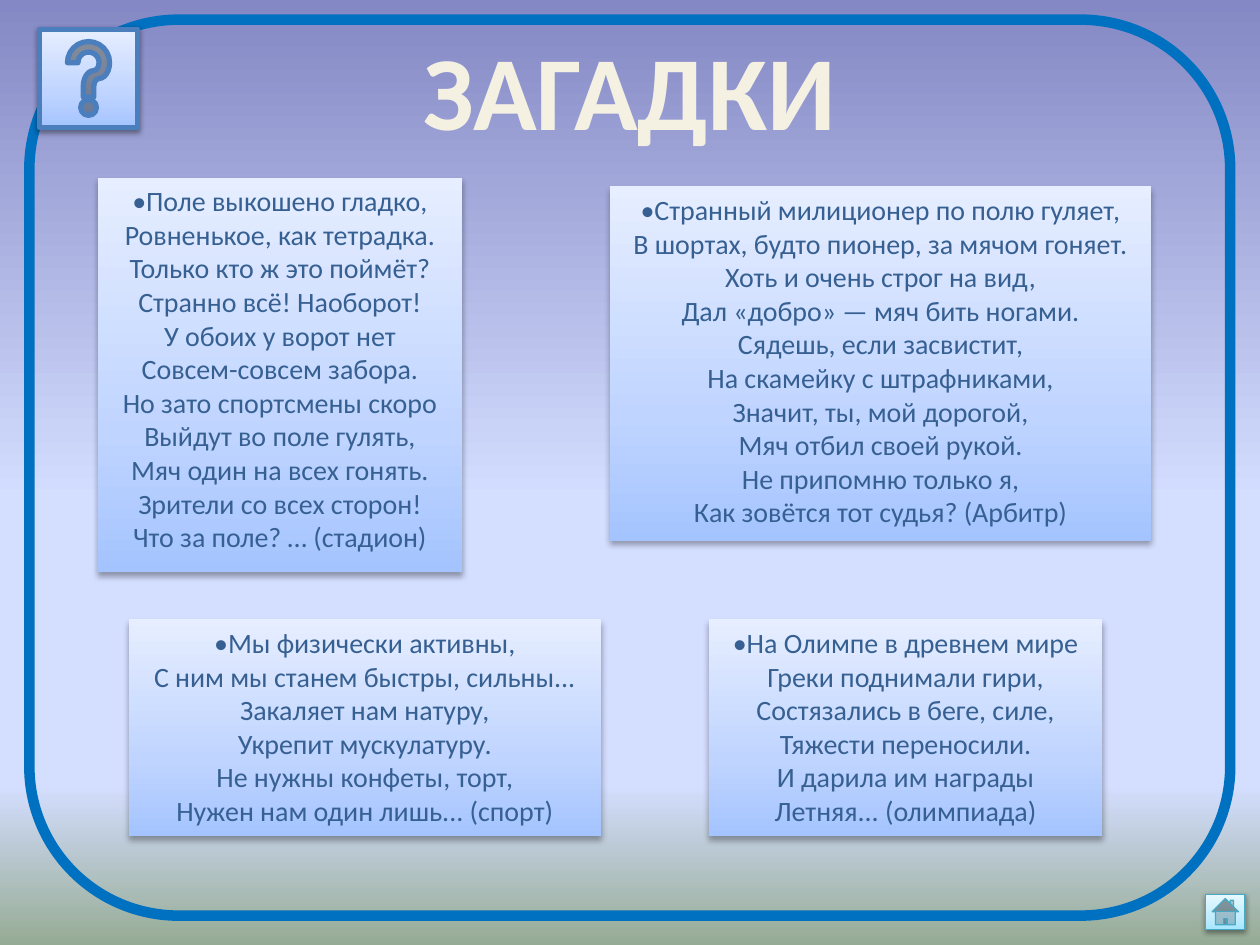
from dataclasses import dataclass

from lxml import etree
from pptx import Presentation
from pptx.dml.color import RGBColor
from pptx.enum.shapes import MSO_SHAPE
from pptx.enum.text import MSO_ANCHOR, PP_ALIGN
from pptx.oxml.ns import qn
from pptx.util import Pt

RECTANGLE = MSO_SHAPE.RECTANGLE
ROUNDED = MSO_SHAPE.ROUNDED_RECTANGLE
HELP_BUTTON = MSO_SHAPE.ACTION_BUTTON_HELP
HOME_BUTTON = MSO_SHAPE.ACTION_BUTTON_HOME
CENTER = PP_ALIGN.CENTER
TOP, MIDDLE = MSO_ANCHOR.TOP, MSO_ANCHOR.MIDDLE


@dataclass(frozen=True)
class Theme:
    font: str = "Calibri"
    title_size: int = 60
    verse_size: int = 16
    title: str = "F4F1E3"
    title_outline: str = "054697"
    title_shadow: str = "6E94DB"
    verse: str = "376092"
    frame: str = "0070C0"
    help_line: str = "4B7EBC"
    home_line: str = "46AAC5"
    shadow: str = "000000"
    sky: tuple = ((0, "8488C4"), (53, "D4DEFF"), (83, "D4DEFF"), (100, "96AB94"))
    blue: tuple = ((0, "A4C4FF"), (35, "BFD4FF"), (100, "E6EEFF"))
    cyan: tuple = ((0, "A7E6FF"), (35, "C1EDFF"), (100, "E7F8FF"))


THEME = Theme()

RIDDLES = [
    ((56, 101.5, 208, 225.5), """•Поле выкошено гладко,
Ровненькое, как тетрадка.
Только кто ж это поймёт?
Странно всё! Наоборот!
У обоих у ворот нет
Совсем-совсем забора.
Но зато спортсмены скоро
Выйдут во поле гулять,
Мяч один на всех гонять.
Зрители со всех сторон!
Что за поле? … (стадион)"""),
    ((348.5, 106.5, 309.5, 202.5), """•Странный милиционер по полю гуляет,
В шортах, будто пионер, за мячом гоняет.
Хоть и очень строг на вид,
Дал «добро» — мяч бить ногами.
Сядешь, если засвистит,
На скамейку с штрафниками,
Значит, ты, мой дорогой,
Мяч отбил своей рукой.
Не припомню только я,
Как зовётся тот судья? (Арбитр)"""),
    ((73.5, 354, 270, 124), """•Мы физически активны,
С ним мы станем быстры, сильны...
Закаляет нам натуру,
Укрепит мускулатуру.
Не нужны конфеты, торт,
Нужен нам один лишь... (спорт)"""),
    ((405, 354, 225, 124), """•На Олимпе в древнем мире
Греки поднимали гири,
Состязались в беге, силе,
Тяжести переносили.
И дарила им награды
Летняя... (олимпиада)"""),
]


def add_color(parent, color):
    return etree.SubElement(parent, qn("a:srgbClr"), val=color)


def apply_gradient(fill, owner, stops, angle):
    fill.gradient()
    fill.gradient_angle = angle
    stop_list = next(owner.iter(qn("a:gsLst")))
    for default_stop in list(stop_list):
        stop_list.remove(default_stop)
    for position, color in stops:
        stop = etree.SubElement(stop_list, qn("a:gs"), pos=str(position * 1000))
        add_color(stop, color)


def add_shadow(effects, color, opacity, blur, distance):
    shadow = etree.SubElement(
        effects, qn("a:outerShdw"), blurRad=str(Pt(blur)), dist=str(Pt(distance)),
        dir="5400000", rotWithShape="0")
    etree.SubElement(add_color(shadow, color), qn("a:alpha"), val=str(opacity * 1000))


def add_panel(slide, kind, box, stops, opacity, blur, distance):
    panel = slide.shapes.add_shape(kind, *map(Pt, box))
    panel.shadow.inherit = False
    apply_gradient(panel.fill, panel._element, stops, 90)
    add_shadow(panel._element.spPr.find(qn("a:effectLst")),
               THEME.shadow, opacity, blur, distance)
    panel.line.fill.background()
    return panel


def set_text(frame, text, size, color, anchor, bold=False):
    frame.word_wrap = True
    frame.vertical_anchor = anchor
    frame.text = text
    for paragraph in frame.paragraphs:
        paragraph.alignment = CENTER
        for run in paragraph.runs:
            run.font.name = THEME.font
            run.font.size = Pt(size)
            run.font.bold = bold
            run.font.color.rgb = RGBColor.from_string(color)


def add_title(slide, box, text):
    title = slide.shapes.add_textbox(*map(Pt, box))
    set_text(title.text_frame, text, THEME.title_size, THEME.title, MIDDLE, True)
    properties = title.text_frame.paragraphs[0].runs[0]._r.get_or_add_rPr()
    outline = etree.Element(qn("a:ln"), w=str(Pt(1)))
    add_color(etree.SubElement(outline, qn("a:solidFill")), THEME.title_outline)
    properties.insert(0, outline)
    effects = etree.Element(qn("a:effectLst"))
    add_shadow(effects, THEME.title_shadow, 100, 1, 2)
    properties.find(qn("a:solidFill")).addnext(effects)


def add_riddle(slide, box, verse):
    card = add_panel(slide, RECTANGLE, box, THEME.blue, 32, 3.5, 2.2)
    set_text(card.text_frame, verse, THEME.verse_size, THEME.verse, TOP)


def set_line(shape, color, width):
    shape.line.color.rgb = RGBColor.from_string(color)
    shape.line.width = Pt(width)


def add_frame(slide, box):
    frame = slide.shapes.add_shape(ROUNDED, *map(Pt, box))
    frame.shadow.inherit = False
    frame.fill.background()
    set_line(frame, THEME.frame, 6)


def add_button(slide, kind, box, stops, line_color, line_width):
    button = add_panel(slide, kind, box, stops, 38, 3.1, 1.6)
    set_line(button, line_color, line_width)


def build_riddles_slide(presentation):
    slide = presentation.slides.add_slide(presentation.slide_layouts[6])
    apply_gradient(slide.background.fill, slide._element, THEME.sky, 270)
    add_title(slide, (124, 16.5, 472, 68), "ЗАГАДКИ")
    add_frame(slide, (16.75, 11.25, 686.25, 512))
    add_button(slide, HELP_BUTTON, (22.5, 16.75, 56.25, 56.25),
               THEME.blue, THEME.help_line, 3)
    for box, verse in RIDDLES:
        add_riddle(slide, box, verse)
    add_button(slide, HOME_BUTTON, (689, 511, 22.5, 20),
               THEME.cyan, THEME.home_line, 0.75)


def main():
    presentation = Presentation()
    presentation.slide_width = Pt(720)
    presentation.slide_height = Pt(540)
    build_riddles_slide(presentation)
    presentation.save("out.pptx")


if __name__ == "__main__":
    main()
